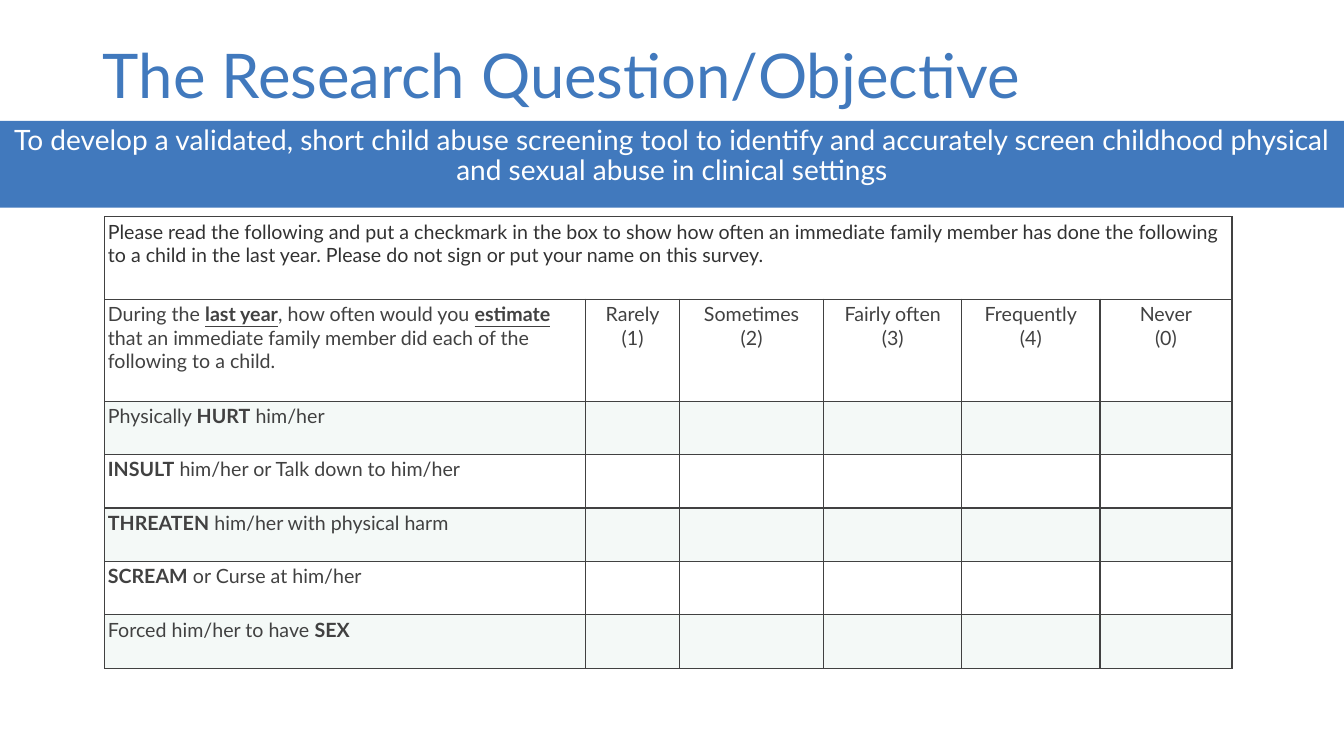
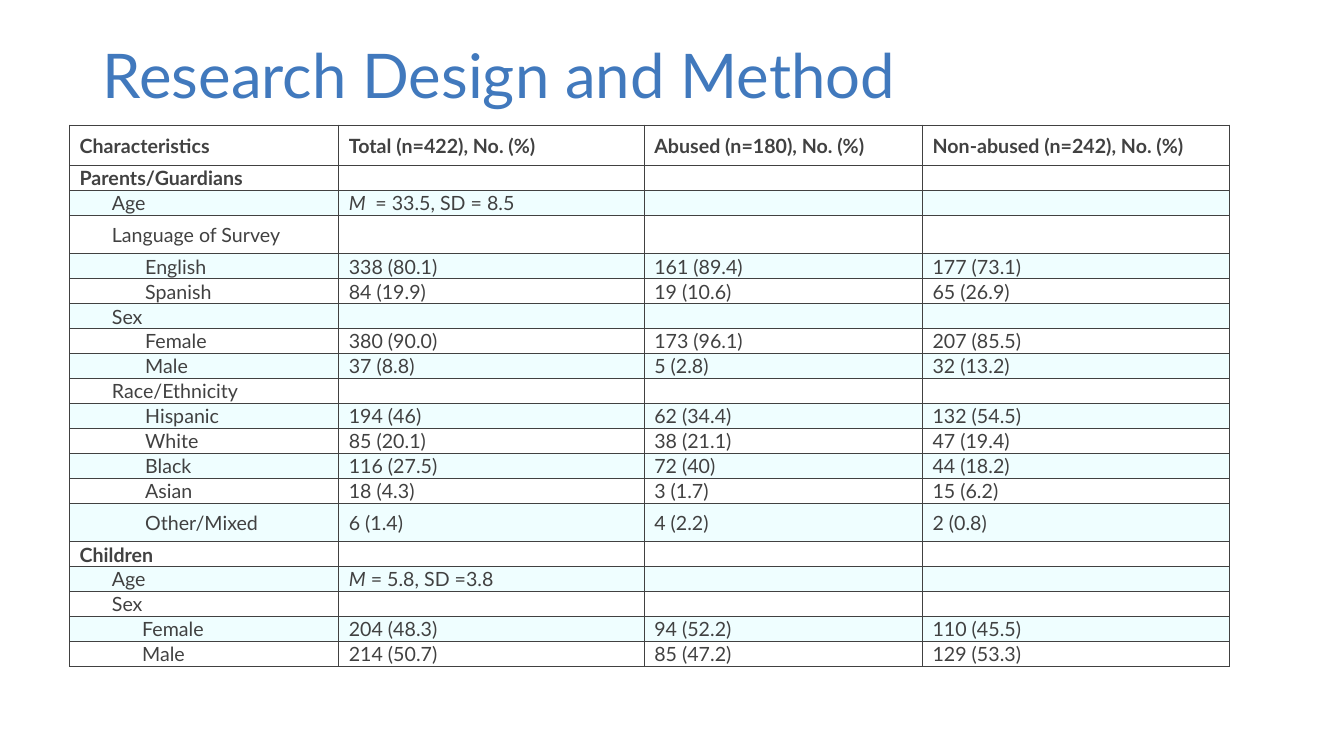
from dataclasses import dataclass

from lxml.etree import SubElement
from pptx import Presentation
from pptx.dml.color import RGBColor
from pptx.enum.text import MSO_ANCHOR, MSO_AUTO_SIZE, PP_ALIGN
from pptx.oxml.ns import qn
from pptx.util import Inches, Pt

FONT = "Lato"
BLUE = RGBColor(0x41, 0x79, 0xBD)
WHITE = RGBColor(0xFF, 0xFF, 0xFF)
INK = RGBColor(0x32, 0x32, 0x32)
GREY = RGBColor(0x41, 0x41, 0x41)
SAGE = RGBColor(0xC9, 0xE1, 0xDA)
AQUA = RGBColor(0x73, 0xFD, 0xFF)

SLIDE_WIDTH, SLIDE_HEIGHT = 13.33, 7.5
TITLE_BOX = (0.92, 0.4, 11.5, 0.8)
BAND_BOX = (0, 1.2, SLIDE_WIDTH, 0.86)
TABLE_SIZE = 14
LEVEL_INDENTS = [(0, 0), (0.31, 0.01), (0.65, 0), (0.31, 0.31)]


@dataclass
class TableStyle:
    border: float
    tint: RGBColor
    opacity: int
    margins: tuple
    anchor: MSO_ANCHOR


SURVEY_STYLE = TableStyle(1, SAGE, 20, (0.03, 0.03, 0.03, 0.03), MSO_ANCHOR.TOP)
SAMPLE_STYLE = TableStyle(0.5, AQUA, 11, (0.1, 0.01, 0.1, 0), MSO_ANCHOR.MIDDLE)

SURVEY_COLUMNS = [4.77, 0.93, 1.43, 1.37, 1.37, 1.31]
SURVEY_ROWS = [0.82, 1.01] + [0.53] * 5
SURVEY_INTRO = (
    "Please read the following and put a checkmark in the box to show how often "
    "an immediate family member has done the following to a child in the last year. "
    "Please do not sign or put your name on this survey."
)
SURVEY_PROMPT = [
    ("During the ", ""),
    ("last year", "bu"),
    (", how often would you ", ""),
    ("estimate", "bu"),
    (" that an immediate family member did each of the following to a child.", ""),
]
SURVEY_SCALE = ["Rarely", "Sometimes", "Fairly often", "Frequently", "Never"]
SURVEY_SCORES = [1, 2, 3, 4, 0]
SURVEY_ITEMS = [
    [("Physically ", ""), ("HURT", "b"), (" him/her", "")],
    [("INSULT", "b"), (" him/her or Talk down to him/her", "")],
    [("THREATEN", "b"), (" him/her with physical harm", "")],
    [("SCREAM", "b"), (" or Curse at him/her", "")],
    [("Forced him/her to have ", ""), ("SEX", "b")],
]

SAMPLE_BOX = (0.69, 1.24, 11.5, 5.37)
SAMPLE_COLUMNS = [2.67, 3.03, 2.76, 3.04]
SAMPLE_TALL_ROWS = {0: 0.4, 3: 0.38, 14: 0.38}
SAMPLE_DATA = [
    (0, "Characteristics", "Total (n=422), No. (%)", "Abused (n=180), No. (%)",
     "Non-abused (n=242), No. (%)"),
    (0, "Parents/Guardians"),
    (1, "Age", [("M ", "i"), (" = 33.5, SD = 8.5", "")]),
    (1, "Language of Survey"),
    (2, "English", "338 (80.1)", "161 (89.4)", "177 (73.1)"),
    (2, "Spanish", "84 (19.9)", "19 (10.6)", "65 (26.9)"),
    (1, "Sex"),
    (2, "Female", "380 (90.0)", "173 (96.1)", "207 (85.5)"),
    (2, "Male", "37 (8.8)", "5 (2.8)", "32 (13.2)"),
    (1, "Race/Ethnicity"),
    (2, "Hispanic", "194 (46)", "62 (34.4)", "132 (54.5)"),
    (2, "White", "85 (20.1)", "38 (21.1)", "47 (19.4)"),
    (2, "Black", "116 (27.5)", "72 (40)", "44 (18.2)"),
    (2, "Asian", "18 (4.3)", "3 (1.7)", "15 (6.2)"),
    (2, "Other/Mixed", "6 (1.4)", "4 (2.2)", "2 (0.8)"),
    (0, "Children"),
    (1, "Age", [("M", "i"), (" = 5.8, SD =3.8", "")]),
    (1, "Sex"),
    (3, "Female", "204 (48.3)", "94 (52.2)", "110 (45.5)"),
    (3, "Male", "214 (50.7)", "85 (47.2)", "129 (53.3)"),
]


def format_run(run, size, color, marks=""):
    run.font.name = FONT
    run.font.size = Pt(size)
    run.font.color.rgb = color
    run.font.bold = "b" in marks
    run.font.italic = "i" in marks
    run.font.underline = "u" in marks


def set_indent(paragraph, left, first):
    properties = paragraph._p.get_or_add_pPr()
    properties.set("marL", str(Inches(left)))
    properties.set("indent", str(Inches(first)))
    return properties


def fill_placeholder(shape, box, text, size, color):
    shape.left, shape.top, shape.width, shape.height = map(Inches, box)
    frame = shape.text_frame
    frame.text = text
    frame.word_wrap = True
    frame.auto_size = MSO_AUTO_SIZE.NONE
    frame.vertical_anchor = MSO_ANCHOR.TOP
    paragraph = frame.paragraphs[0]
    paragraph.line_spacing = 0.9
    paragraph.space_before = Pt(0)
    format_run(paragraph.runs[0], size, color)
    return paragraph


def add_titled_slide(presentation, layout_name, title):
    layout = presentation.slide_layouts.get_by_name(layout_name)
    slide = presentation.slides.add_slide(layout)
    paragraph = fill_placeholder(slide.shapes.title, TITLE_BOX, title, 44, BLUE)
    paragraph.alignment = PP_ALIGN.LEFT
    return slide


def add_band(slide, box, text):
    band = slide.placeholders[1]
    paragraph = fill_placeholder(band, box, text, 20, WHITE)
    band.fill.solid()
    band.fill.fore_color.rgb = BLUE
    paragraph.alignment = PP_ALIGN.CENTER
    SubElement(set_indent(paragraph, 0, 0), qn("a:buNone"))


def format_cell(cell, style, tinted):
    (cell.margin_left, cell.margin_top,
     cell.margin_right, cell.margin_bottom) = map(Inches, style.margins)
    cell.vertical_anchor = style.anchor
    properties = cell._tc.get_or_add_tcPr()
    for side in ("lnL", "lnR", "lnT", "lnB"):
        line = SubElement(properties, qn(f"a:{side}"), w=str(Pt(style.border)))
        line_fill = SubElement(line, qn("a:solidFill"))
        SubElement(line_fill, qn("a:srgbClr"), val=str(GREY))
    if tinted:
        cell.fill.solid()
        cell.fill.fore_color.rgb = style.tint
        tint = properties.find(qn("a:solidFill")).find(qn("a:srgbClr"))
        SubElement(tint, qn("a:alpha"), val=str(style.opacity * 1000))
    else:
        cell.fill.background()


def write_cell(cell, content, marks="", color=GREY):
    paragraph = cell.text_frame.paragraphs[0]
    if not content:
        SubElement(paragraph._p, qn("a:endParaRPr"), sz=str(TABLE_SIZE * 100))
    elif isinstance(content, str):
        cell.text_frame.text = content
        for paragraph in cell.text_frame.paragraphs:
            format_run(paragraph.runs[0], TABLE_SIZE, color, marks)
    else:
        for text, run_marks in content:
            run = paragraph.add_run()
            run.text = text
            format_run(run, TABLE_SIZE, color, run_marks)


def add_grid(slide, left, top, columns, rows, style):
    table = slide.shapes.add_table(
        len(rows), len(columns), Inches(left), Inches(top),
        Inches(sum(columns)), Inches(sum(rows))).table
    table.first_row = False
    table.horz_banding = False
    for column, width in zip(table.columns, columns):
        column.width = Inches(width)
    for index, (row, height) in enumerate(zip(table.rows, rows)):
        row.height = Inches(height)
        for cell in row.cells:
            format_cell(cell, style, index > 0 and index % 2 == 0)
    return table


def add_survey_table(slide, left, top):
    table = add_grid(slide, left, top, SURVEY_COLUMNS, SURVEY_ROWS, SURVEY_STYLE)
    table.cell(0, 0).merge(table.cell(0, len(SURVEY_COLUMNS) - 1))
    write_cell(table.cell(0, 0), SURVEY_INTRO, color=INK)
    write_cell(table.cell(1, 0), SURVEY_PROMPT)
    for column, (label, score) in enumerate(zip(SURVEY_SCALE, SURVEY_SCORES), 1):
        cell = table.cell(1, column)
        write_cell(cell, f"{label}\n({score})")
        for paragraph in cell.text_frame.paragraphs:
            paragraph.alignment = PP_ALIGN.CENTER
    for row, item in enumerate(SURVEY_ITEMS, 2):
        write_cell(table.cell(row, 0), item)
        for column in range(1, len(SURVEY_COLUMNS)):
            write_cell(table.cell(row, column), "")


def add_sample_table(slide, box):
    left, top, _, height = box
    plain_count = len(SAMPLE_DATA) - len(SAMPLE_TALL_ROWS)
    plain_height = (height - sum(SAMPLE_TALL_ROWS.values())) / plain_count
    rows = [SAMPLE_TALL_ROWS.get(row, plain_height) for row in range(len(SAMPLE_DATA))]
    table = add_grid(slide, left, top, SAMPLE_COLUMNS, rows, SAMPLE_STYLE)
    for row, (level, *values) in enumerate(SAMPLE_DATA):
        values += [""] * (len(SAMPLE_COLUMNS) - len(values))
        for column, value in enumerate(values):
            write_cell(table.cell(row, column), value, "" if level else "b")
        label = table.cell(row, 0).text_frame.paragraphs[0]
        set_indent(label, *LEVEL_INDENTS[level])


def add_objective_slide(presentation):
    slide = add_titled_slide(
        presentation, "Title and Content", "The Research Question/Objective")
    add_band(
        slide, BAND_BOX,
        "To develop a validated, short child abuse screening tool to identify and "
        "accurately screen childhood physical and sexual abuse in clinical settings")
    add_survey_table(slide, 1.04, 2.15)


def add_method_slide(presentation):
    slide = add_titled_slide(presentation, "Title Only", "Research Design and Method")
    add_sample_table(slide, SAMPLE_BOX)


def main():
    presentation = Presentation()
    presentation.slide_width = Inches(SLIDE_WIDTH)
    presentation.slide_height = Inches(SLIDE_HEIGHT)
    add_objective_slide(presentation)
    add_method_slide(presentation)
    presentation.save("out.pptx")


if __name__ == "__main__":
    main()
